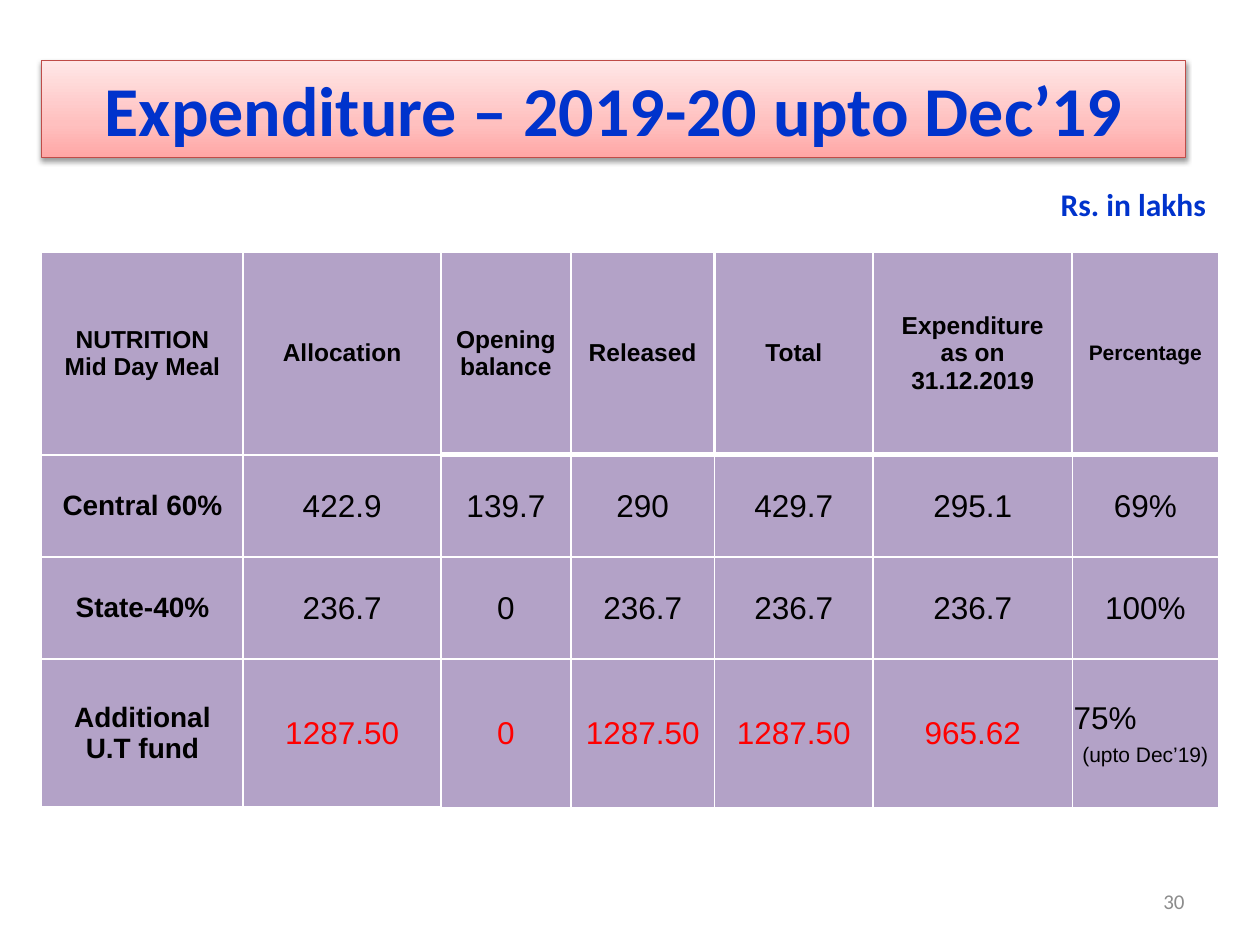
from copy import deepcopy
from dataclasses import dataclass

from lxml import etree
from pptx import Presentation
from pptx.dml.color import RGBColor
from pptx.enum import shapes, text
from pptx.oxml.ns import qn
from pptx.util import Pt


@dataclass(frozen=True)
class Theme:
    heading_font: str = "Calibri"
    table_font: str = "Arial"
    blue: str = "0033CC"
    black: str = "000000"
    red: str = "FF0000"
    grey: str = "8C8C8C"
    white: str = "FFFFFF"
    cell: str = "B3A2C7"
    title_line: str = "BF4C48"
    title_stops: tuple = ((0, "FFA6A5"), (0.35, "FFC0BF"), (1, "FFE7E7"))
    title_size: float = 40
    value_size: float = 18
    label_size: float = 16
    header_size: float = 14
    small_size: float = 12


THEME = Theme()
CENTER, LEFT, RIGHT = text.PP_ALIGN.CENTER, text.PP_ALIGN.LEFT, text.PP_ALIGN.RIGHT

COLUMNS = (115.2, 113, 74.2, 82.1, 90.7, 113.8, 83.5)
ROWS = (115.9, 58.3, 58.3, 85)
HEADERS = ("NUTRITION\nMid Day Meal", "Allocation", "Opening balance", "Released",
           "Total", "Expenditure as on 31.12.2019", "Percentage")
FUNDS = (
    ("Central 60%", "422.9", "139.7", "290", "429.7", "295.1", "69%"),
    ("State-40%", "236.7", "0", "236.7", "236.7", "236.7", "100%"),
    ("Additional U.T fund", "1287.50", "0", "1287.50", "1287.50", "965.62", "75%"),
)


def color(code):
    return RGBColor.from_string(code)


def write(para, words, size, font, ink, bold=False, align=LEFT):
    para.alignment = align
    span = para.add_run()
    span.text = words
    span.font.size = Pt(size)
    span.font.name = font
    span.font.bold = bold
    span.font.color.rgb = color(ink)


def add_title(page, words):
    box = page.shapes.add_shape(shapes.MSO_SHAPE.RECTANGLE,
                                Pt(23.8), Pt(34.6), Pt(653.8), Pt(55.4))
    box.fill.gradient()
    box.fill.gradient_angle = 90
    stop_list = box.element.spPr.find(".//" + qn("a:gsLst"))
    stop_list.append(deepcopy(stop_list[-1]))
    for stop, (position, code) in zip(box.fill.gradient_stops, THEME.title_stops):
        stop.position = position
        stop.color.rgb = color(code)
    box.line.color.rgb = color(THEME.title_line)
    box.line.width = Pt(0.75)
    add_shadow(box)
    box.text_frame.word_wrap = True
    box.text_frame.vertical_anchor = text.MSO_ANCHOR.TOP
    write(box.text_frame.paragraphs[0], words, THEME.title_size,
          THEME.heading_font, THEME.blue, True, CENTER)


def add_shadow(box):
    box.shadow.inherit = False
    effects = box.element.spPr.find(qn("a:effectLst"))
    shadow = etree.SubElement(effects, qn("a:outerShdw"), blurRad=str(Pt(3.1)),
                              dist=str(Pt(1.6)), dir="5400000", rotWithShape="0")
    ink = etree.SubElement(shadow, qn("a:srgbClr"), val=THEME.black)
    etree.SubElement(ink, qn("a:alpha"), val="38000")


def add_label(page, place, words, size, ink, bold=False, align=LEFT, wrap=True,
              anchor=text.MSO_ANCHOR.TOP):
    box = page.shapes.add_textbox(*map(Pt, place))
    box.text_frame.word_wrap = wrap
    box.text_frame.vertical_anchor = anchor
    write(box.text_frame.paragraphs[0], words, size, THEME.heading_font, ink, bold, align)


def horizontal_width(line, column):
    """Width of the rule above row number `line`."""
    if line == 0:
        return 1
    if column < 2:
        return 1.5
    return 3 if line == 1 else 1


def vertical_width(line, row):
    """Width of the rule left of column number `line`."""
    if line in (0, len(COLUMNS)):
        return 1
    return 1.5 if row == 0 or line == 1 else 1


def add_borders(cell, row, column):
    properties = cell._tc.get_or_add_tcPr()
    widths = {"a:lnL": vertical_width(column, row),
              "a:lnR": vertical_width(column + 1, row),
              "a:lnT": horizontal_width(row, column),
              "a:lnB": horizontal_width(row + 1, column)}
    for tag, width in widths.items():
        line = etree.SubElement(properties, qn(tag), w=str(Pt(width)))
        fill = etree.SubElement(line, qn("a:solidFill"))
        etree.SubElement(fill, qn("a:srgbClr"), val=THEME.white)


def cell_style(row, column):
    """Size, colour and boldness of the text in a cell."""
    last_column = column == len(COLUMNS) - 1
    if row == 0:
        return THEME.small_size if last_column else THEME.header_size, THEME.black, True
    if column == 0:
        return THEME.label_size, THEME.black, True
    is_red = row == len(FUNDS) and not last_column
    return THEME.value_size, THEME.red if is_red else THEME.black, False


def fill_cell(cell, row, column, words):
    add_borders(cell, row, column)
    cell.fill.solid()
    cell.fill.fore_color.rgb = color(THEME.cell)
    cell.vertical_anchor = text.MSO_ANCHOR.MIDDLE
    if row and column:
        cell.margin_left = cell.margin_right = cell.margin_top = Pt(0.72)
        cell.margin_bottom = 0
    size, ink, bold = cell_style(row, column)
    frame = cell.text_frame
    for index, line in enumerate(words.split("\n")):
        para = frame.add_paragraph() if index else frame.paragraphs[0]
        write(para, line, size, THEME.table_font, ink, bold, CENTER)


def add_expenditure_table(page):
    frame = page.shapes.add_table(len(ROWS), len(COLUMNS), Pt(23.8), Pt(144),
                                  Pt(sum(COLUMNS)), Pt(sum(ROWS)))
    table = frame.table
    table.first_row = table.horz_banding = False
    for column, width in zip(table.columns, COLUMNS):
        column.width = Pt(width)
    for row, height in zip(table.rows, ROWS):
        row.height = Pt(height)
    for row, record in enumerate((HEADERS, *FUNDS)):
        for column, words in enumerate(record):
            fill_cell(table.cell(row, column), row, column, words)

    last_frame = table.cell(len(ROWS) - 1, len(COLUMNS) - 1).text_frame
    last_frame.paragraphs[0].alignment = LEFT
    note = last_frame.add_paragraph()
    note.space_before = Pt(4)
    write(note, "(upto Dec’19)", THEME.small_size, THEME.table_font,
          THEME.black, align=CENTER)


def main():
    deck = Presentation()
    deck.slide_width, deck.slide_height = Pt(720), Pt(540)
    page = deck.slides.add_slide(deck.slide_layouts[6])
    add_title(page, "Expenditure – 2019-20 upto Dec’19")
    add_expenditure_table(page)
    add_label(page, (599, 102.2, 97.9, 28.8), "Rs. in lakhs", THEME.value_size,
              THEME.blue, bold=True, wrap=False)
    add_label(page, (516.2, 500.4, 167.8, 28.8), "30", THEME.small_size, THEME.grey,
              align=RIGHT, anchor=text.MSO_ANCHOR.MIDDLE)
    deck.save("out.pptx")


if __name__ == "__main__":
    main()
